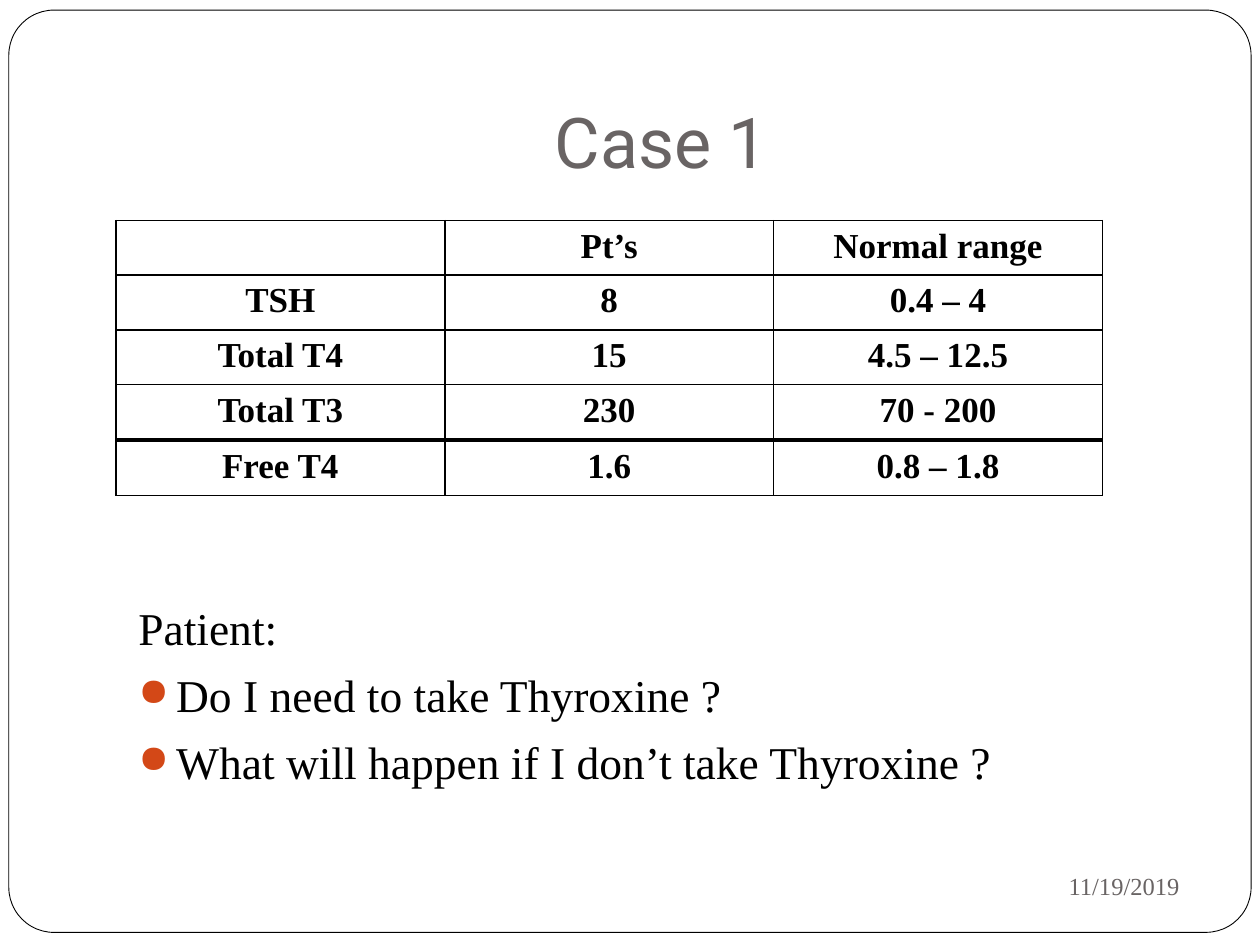
from lxml.etree import SubElement
from pptx import Presentation
from pptx.dml.color import RGBColor
from pptx.enum.shapes import MSO_SHAPE
from pptx.enum.text import MSO_ANCHOR, PP_ALIGN
from pptx.oxml.ns import qn
from pptx.util import Inches, Pt

COLORS = {"paper": "FFFFFF", "ink": "000000", "muted": "696464", "bullet": "D34817"}
SERIF = "Times New Roman"
LAB_RESULTS = [
    ["", "Pt’s", "Normal range"],
    ["TSH", "8", "0.4 – 4"],
    ["Total T4", "15", "4.5 – 12.5"],
    ["Total T3", "230", "70 - 200"],
]
FREE_T4 = [["Free T4", "1.6", "0.8 – 1.8"]]
QUESTIONS = ["Do I need to take Thyroxine ?", "What will happen if I don’t take Thyroxine ?"]


def rgb(name):
    return RGBColor.from_string(COLORS[name])


def write(paragraph, text, size=20, font=SERIF, color="ink", bold=False,
          align=PP_ALIGN.LEFT, before=0):
    paragraph.alignment = align
    paragraph.space_before = Pt(before)
    # Formatting the paragraph font too keeps an empty cell at the same height
    targets = [paragraph.font]
    if text:
        run = paragraph.add_run()
        run.text = text
        targets.append(run.font)
    for target in targets:
        target.size = Pt(size)
        target.name = font
        target.bold = bold
        target.color.rgb = rgb(color)


def add_bullet(paragraph):
    properties = paragraph._p.get_or_add_pPr()
    properties.set("marL", str(Inches(0.3)))
    properties.set("indent", str(-Inches(0.3)))
    color = SubElement(properties, qn("a:buClr"))
    SubElement(color, qn("a:srgbClr"), val=COLORS["bullet"])
    SubElement(properties, qn("a:buSzPct"), val="85000")
    SubElement(properties, qn("a:buChar"), char="●")


def add_frame(slide, left, top, width, height):
    frame = slide.shapes.add_shape(MSO_SHAPE.ROUNDED_RECTANGLE, left, top, width, height)
    frame.adjustments[0] = 0.049
    frame.shadow.inherit = False
    frame.fill.solid()
    frame.fill.fore_color.rgb = rgb("paper")
    frame.line.color.rgb = rgb("ink")
    frame.line.width = Pt(0.5)


def add_text_area(slide, left, top, width, height, anchor):
    area = slide.shapes.add_textbox(left, top, width, height).text_frame
    area.word_wrap = True
    area.vertical_anchor = anchor
    return area


def add_title(slide, left, top, width, height):
    title = add_text_area(slide, left, top, width, height, MSO_ANCHOR.BOTTOM)
    title.margin_bottom = Inches(0.1)
    write(title.paragraphs[0], "Case 1", size=40, font="Roboto", color="muted",
          align=PP_ALIGN.CENTER)


def add_date(slide, left, top, width, height):
    date = add_text_area(slide, left, top, width, height, MSO_ANCHOR.MIDDLE)
    write(date.paragraphs[0], "11/19/2019", size=14, color="muted", align=PP_ALIGN.RIGHT)


def add_questions(slide, left, top, width, height):
    area = add_text_area(slide, left, top, width, height, MSO_ANCHOR.TOP)
    write(area.paragraphs[0], "Patient:", size=26)
    for question in QUESTIONS:
        paragraph = area.add_paragraph()
        write(paragraph, question, size=26, before=7.2)
        add_bullet(paragraph)


def add_borders(cell):
    properties = cell._tc.get_or_add_tcPr()
    for position, side in enumerate(("a:lnL", "a:lnR", "a:lnT", "a:lnB")):
        border = SubElement(properties, qn(side), w=str(Pt(1)))
        fill = SubElement(border, qn("a:solidFill"))
        SubElement(fill, qn("a:srgbClr"), val=COLORS["ink"])
        properties.insert(position, border)


def add_lab_table(slide, left, top, width, row_height, rows):
    table = slide.shapes.add_table(len(rows), len(rows[0]), left, top, width,
                                   row_height * len(rows)).table
    table.first_row = False
    table.horz_banding = False
    for row, values in enumerate(rows):
        for column, value in enumerate(values):
            cell = table.cell(row, column)
            cell.fill.background()
            write(cell.text_frame.paragraphs[0], value, bold=True, align=PP_ALIGN.CENTER)
            add_borders(cell)


def main():
    presentation = Presentation()
    presentation.slide_width = Inches(10)
    presentation.slide_height = Inches(7.5)
    slide = presentation.slides.add_slide(presentation.slide_layouts[6])

    # Page frame, title and date
    add_frame(slide, Inches(0.07), Inches(0.08), Inches(9.86), Inches(7.32))
    add_title(slide, Inches(1), Inches(0.3), Inches(8.5), Inches(1.25))
    add_date(slide, Inches(6.75), Inches(6.77), Inches(2.71), Inches(0.52))

    # Patient's questions
    add_questions(slide, Inches(1), Inches(4.71), Inches(8.5), Inches(1.87))

    # Thyroid results, with free T4 set apart
    for top, rows in ((1.75, LAB_RESULTS), (3.5, FREE_T4)):
        add_lab_table(slide, Inches(0.92), Inches(top), Inches(7.83), Inches(0.41), rows)

    presentation.save("out.pptx")


if __name__ == "__main__":
    main()
